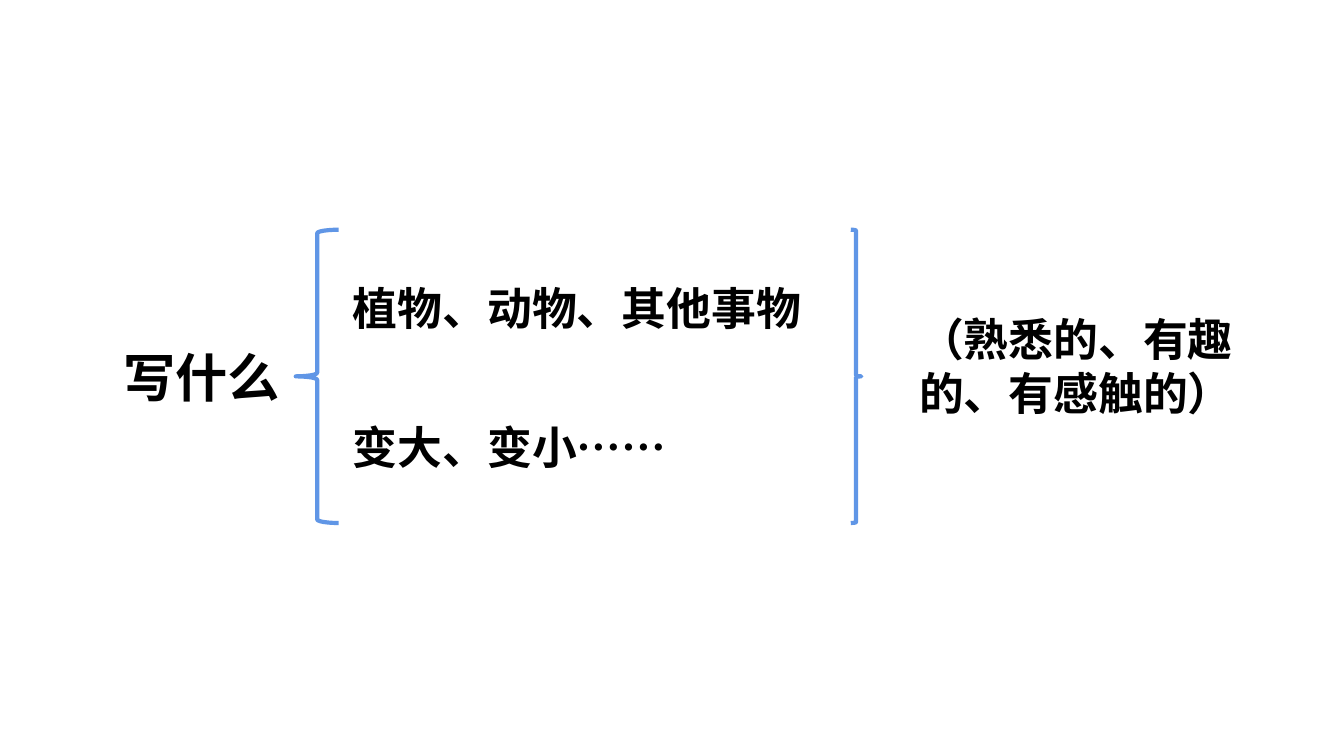
import pptx
import pptx.dml.color
import pptx.enum.shapes
import pptx.enum.text
import pptx.oxml.ns
import pptx.util
from lxml import etree

Cm = pptx.util.Cm
Pt = pptx.util.Pt
SHAPES = pptx.enum.shapes.MSO_SHAPE

FONT = "Noto Sans CJK SC"
BLACK = "000000"
BLUE = "6096E6"
BRACE_TOP, BRACE_HEIGHT = 4.34, 5.54


def color(value):
    return pptx.dml.color.RGBColor.from_string(value)


def apply_format(target, values):
    for name, value in values.items():
        setattr(target, name, value)


def add_label(page, text, left, top, width, height, size=24):
    box = page.shapes.add_textbox(Cm(left), Cm(top), Cm(width), Cm(height))
    apply_format(box.text_frame, {
        "word_wrap": True,
        "auto_size": pptx.enum.text.MSO_AUTO_SIZE.SHAPE_TO_FIT_TEXT,
    })
    para = box.text_frame.paragraphs[0]
    span = para.add_run()
    span.text = text
    apply_format(span.font, {"name": FONT, "size": Pt(size), "bold": True})
    span.font.color.rgb = color(BLACK)
    # Chinese text takes the East Asian font
    east_asian = etree.SubElement(span.font._element, pptx.oxml.ns.qn("a:ea"))
    east_asian.set("typeface", FONT)


def add_brace(page, kind, left, width):
    brace = page.shapes.add_shape(
        kind, Cm(left), Cm(BRACE_TOP), Cm(width), Cm(BRACE_HEIGHT))
    brace.shadow.inherit = False
    brace.fill.background()
    brace.line.color.rgb = color(BLUE)
    brace.line.width = Pt(2.25)


def main():
    deck = pptx.Presentation()
    apply_format(deck, {"slide_width": Cm(25.4), "slide_height": Cm(14.28)})
    page = deck.slides.add_slide(deck.slide_layouts[6])

    # Question, its two answers, and the remark on them
    add_label(page, "写什么", 2.08, 6.4, 3.5, 1.45, size=28)
    add_label(page, "植物、动物、其他事物", 6.42, 5.18, 9.12, 1.27)
    add_label(page, "变大、变小……", 6.42, 7.8, 7.77, 1.27)
    add_label(page, "（熟悉的、有趣的、有感触的）", 17.12, 5.77, 6.65, 2.31)

    # Braces around the answers
    add_brace(page, SHAPES.LEFT_BRACE, 5.59, 0.81)
    add_brace(page, SHAPES.RIGHT_BRACE, 16.08, 0.2)

    deck.save("out.pptx")


if __name__ == "__main__":
    main()
